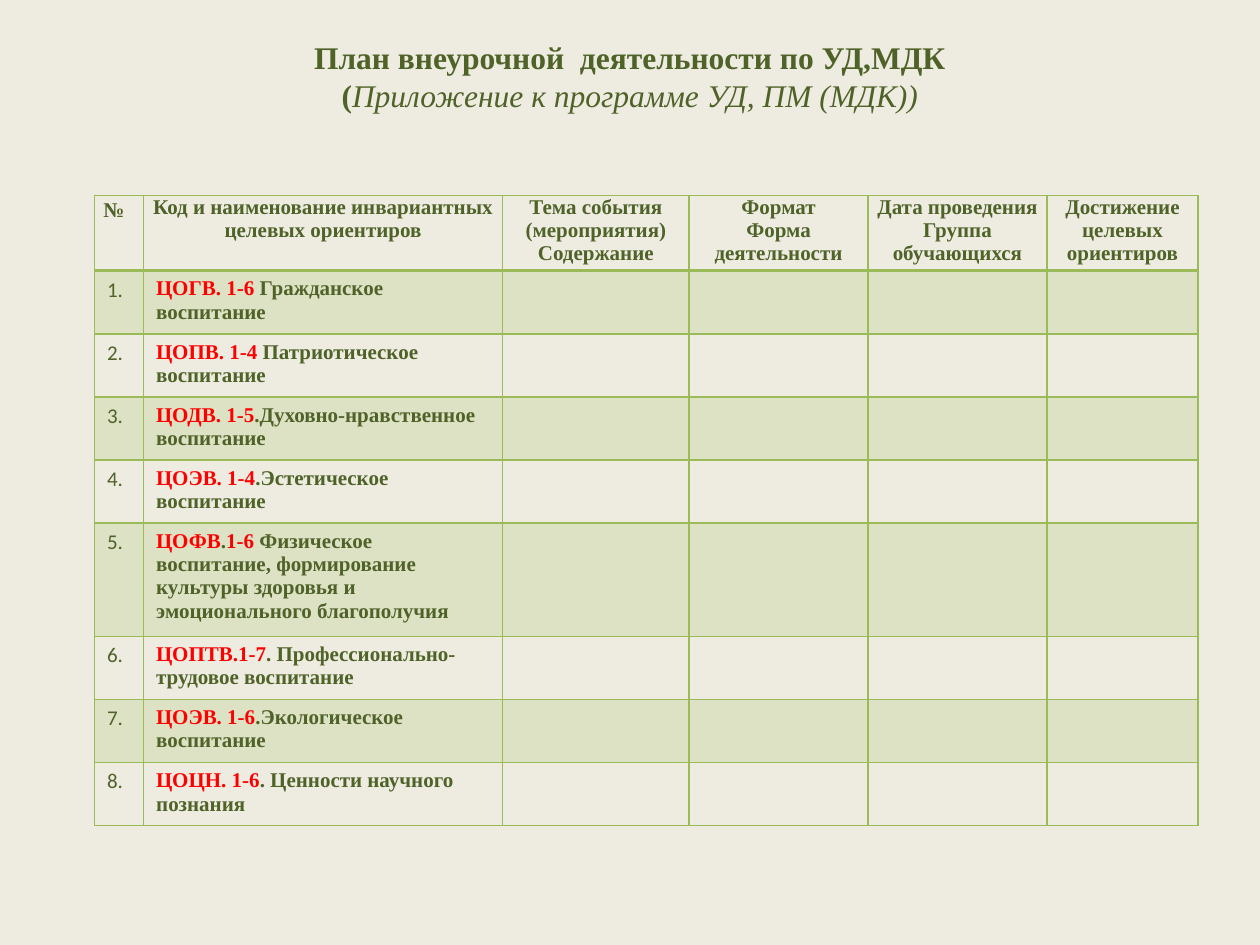
from dataclasses import dataclass

from lxml import etree
from pptx import Presentation
from pptx import util as u
from pptx.dml.color import RGBColor
from pptx.enum import text
from pptx.oxml.ns import qn


@dataclass(frozen=True)
class Theme:
    background: str = "EEECE1"
    ink: str = "4F6228"
    code: str = "FF0000"
    accent: str = "9BBB59"
    band_opacity: int = 20
    serif: str = "Times New Roman"
    sans: str = "Calibri"
    title_size: int = 18
    table_size: int = 12


THEME = Theme()

TITLE = "План внеурочной  деятельности по УД,МДК"
SUBTITLE_BRACKET = "("
SUBTITLE = "Приложение к программе УД, ПМ (МДК))"

HEADERS = [
    "№",
    "Код и наименование инвариантных целевых ориентиров",
    "Тема события\n(мероприятия)\nСодержание",
    "Формат\nФорма деятельности",
    "Дата проведения\nГруппа обучающихся",
    "Достижение целевых ориентиров",
]
# Each goal alternates code text and plain text.
GOALS = [
    ("ЦОГВ. 1-6 ", "Гражданское воспитание"),
    ("ЦОПВ. 1-4 ", "Патриотическое воспитание"),
    ("ЦОДВ. 1-5", ".Духовно-нравственное воспитание"),
    ("ЦОЭВ. 1-4", ".Эстетическое воспитание"),
    ("ЦОФВ", ".", "1-6 ", "Физическое воспитание, формирование культуры "
     "здоровья и эмоционального благополучия"),
    ("ЦОПТВ.1-7", ". Профессионально-трудовое воспитание"),
    ("ЦОЭВ. 1-6", ".Экологическое воспитание"),
    ("ЦОЦН. 1-6", ". Ценности научного познания"),
]
COLUMN_WIDTHS = [0.39, 2.85, 1.48, 1.42, 1.42, 1.2]
ROW_HEIGHT = 0.41


def style(run, size, color=THEME.ink, font=THEME.serif, bold=True, italic=False):
    run.font.size = u.Pt(size)
    run.font.name = font
    run.font.bold = bold
    run.font.italic = italic
    run.font.color.rgb = RGBColor.from_string(color)


def add_run(paragraph, words, size, **look):
    run = paragraph.add_run()
    run.text = words
    style(run, size, **look)


def set_borders(cell, bottom):
    properties = cell._tc.get_or_add_tcPr()
    for side, points in (("L", 1), ("R", 1), ("T", 1), ("B", bottom)):
        line = etree.SubElement(properties, qn(f"a:ln{side}"), w=str(u.Pt(points)))
        fill = etree.SubElement(line, qn("a:solidFill"))
        etree.SubElement(fill, qn("a:srgbClr"), val=THEME.accent)


def set_band(cell, shaded):
    if not shaded:
        cell.fill.background()
        return
    cell.fill.solid()
    cell.fill.fore_color.rgb = RGBColor.from_string(THEME.accent)
    color = cell._tc.tcPr.find(qn("a:solidFill")).find(qn("a:srgbClr"))
    etree.SubElement(color, qn("a:alpha"), val=str(THEME.band_opacity * 1000))


def add_title(slide):
    box = slide.shapes.add_textbox(u.Inches(0.5), u.Inches(0.3), u.Inches(9), u.Inches(0.61))
    frame = box.text_frame
    frame.word_wrap = True
    frame.vertical_anchor = text.MSO_ANCHOR.MIDDLE
    heading = frame.paragraphs[0]
    heading.alignment = text.PP_ALIGN.CENTER
    add_run(heading, TITLE, THEME.title_size)
    heading.add_line_break()
    add_run(heading, SUBTITLE_BRACKET, THEME.title_size)
    add_run(heading, SUBTITLE, THEME.title_size, bold=False, italic=True)


def fill_header(cell, label, centred):
    cell.margin_left = cell.margin_right = u.Inches(0.07)
    cell.margin_top = cell.margin_bottom = 0
    cell.text_frame.text = label
    for paragraph in cell.text_frame.paragraphs:
        if centred:
            paragraph.alignment = text.PP_ALIGN.CENTER
        else:
            paragraph.line_spacing = 1.15
        for run in paragraph.runs:
            style(run, THEME.table_size)


def add_plan(slide):
    row_count = len(GOALS) + 1
    plan = slide.shapes.add_table(
        row_count, len(HEADERS), u.Inches(0.75), u.Inches(1.55),
        u.Inches(sum(COLUMN_WIDTHS)), u.Inches(ROW_HEIGHT * row_count)).table
    plan.first_row = plan.horz_banding = False
    for column, width in zip(plan.columns, COLUMN_WIDTHS):
        column.width = u.Inches(width)
    for number, row in enumerate(plan.rows):
        row.height = u.Inches(ROW_HEIGHT)
        for cell in row.cells:
            set_borders(cell, bottom=1 if number else 2)
            set_band(cell, shaded=number % 2 == 1)

    for index, label in enumerate(HEADERS):
        fill_header(plan.cell(0, index), label, centred=index > 0)
    for number, goal in enumerate(GOALS, start=1):
        add_run(plan.cell(number, 0).text_frame.paragraphs[0], f"{number}.",
                THEME.table_size, font=THEME.sans, bold=False)
        paragraph = plan.cell(number, 1).text_frame.paragraphs[0]
        for index, words in enumerate(goal):
            add_run(paragraph, words, THEME.table_size,
                    color=THEME.ink if index % 2 else THEME.code)


def main():
    deck = Presentation()
    deck.slide_width, deck.slide_height = u.Inches(10), u.Inches(7.5)
    slide = deck.slides.add_slide(deck.slide_layouts[6])
    slide.background.fill.solid()
    slide.background.fill.fore_color.rgb = RGBColor.from_string(THEME.background)
    add_title(slide)
    add_plan(slide)
    deck.save("out.pptx")


if __name__ == "__main__":
    main()
